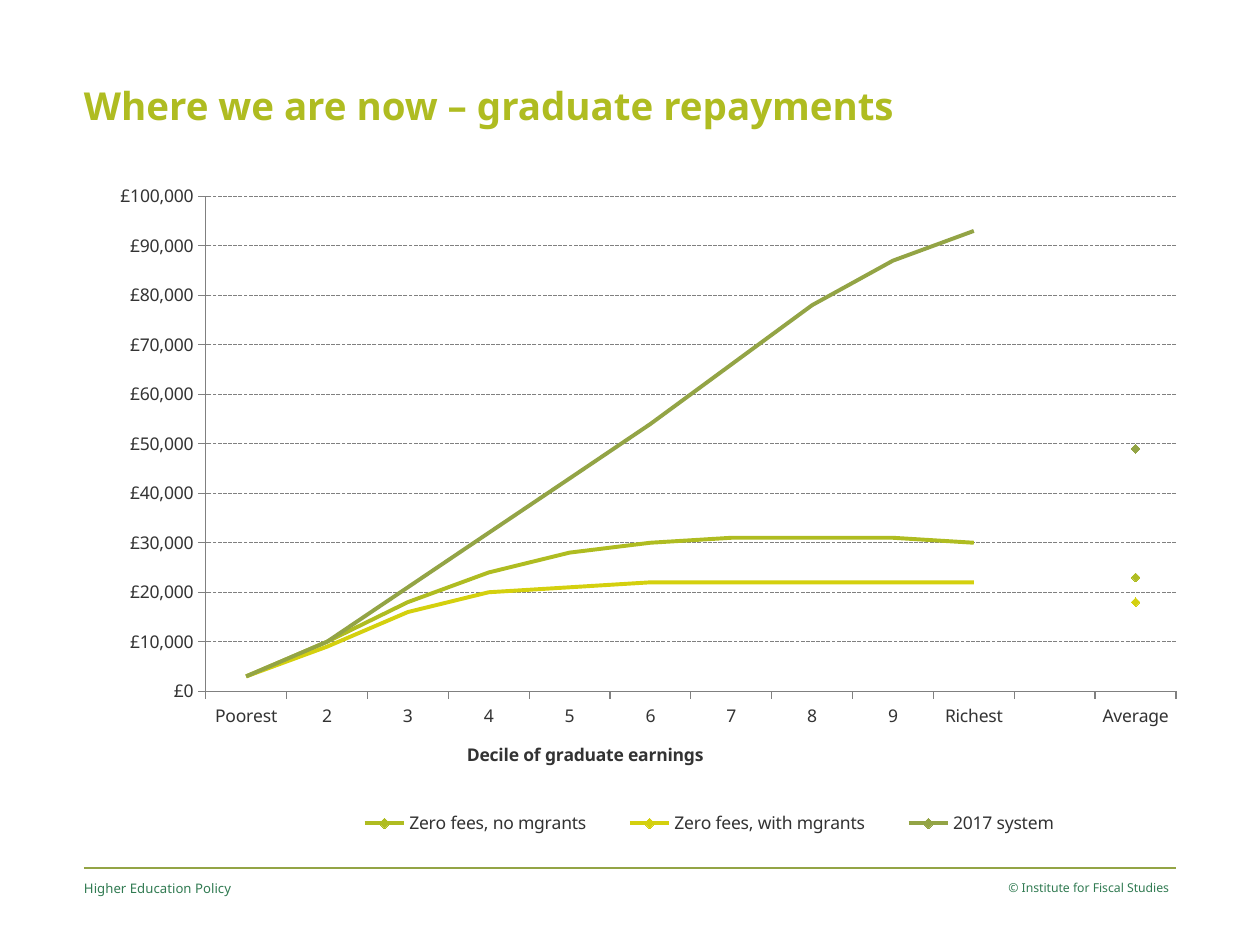
from lxml import etree
from pptx import Presentation
from pptx.chart.data import CategoryChartData
from pptx.dml.color import RGBColor
from pptx.enum.chart import (XL_CHART_TYPE as ChartType, XL_LEGEND_POSITION as LegendPos,
                             XL_MARKER_STYLE as Marker, XL_TICK_MARK as Tick)
from pptx.enum.dml import MSO_LINE_DASH_STYLE as Dash
from pptx.enum.text import PP_ALIGN as Align
from pptx.oxml import parse_xml
from pptx.oxml.ns import nsdecls, qn
from pptx.util import Pt

# Content
FONT = "Noto Sans"
COLORS = {"no grants": "AFBC21", "with grants": "D4D00E", "current": "93A445",
          "footer": "317B52", "text": "333333", "axis": "808080"}
TITLE = "Where we are now – graduate repayments"
TOPIC = "Higher Education Policy"
COPYRIGHT = "© Institute for Fiscal Studies"
AXIS_TITLE = "Decile of graduate earnings"
DECILES = ["Poorest", "2", "3", "4", "5", "6", "7", "8", "9", "Richest"]
# (legend name, colour, repayments by decile in £000, average in £000)
SYSTEMS = [
    ("Zero fees, no mgrants", "no grants", [3, 10, 18, 24, 28, 30, 31, 31, 31, 30], 23),
    ("Zero fees, with mgrants", "with grants", [3, 9, 16, 20, 21, 22, 22, 22, 22, 22], 18),
    ("2017 system", "current", [3, 10, 21, 32, 43, 54, 66, 78, 87, 93], 49),
]

# Page grid
LEFT, RIGHT, FOOTER_TOP = 48, 672, 503


def rgb(key):
    return RGBColor.from_string(COLORS[key])


def set_font(font, size, color, bold=False):
    font.name, font.size, font.bold = FONT, Pt(size), bold
    font.color.rgb = rgb(color)


def add_text(slide, text, box, size, color, bold=False, align=Align.LEFT, inset_right=0):
    frame = slide.shapes.add_textbox(*map(Pt, box)).text_frame
    frame.word_wrap = True
    frame.margin_left = frame.margin_top = frame.margin_bottom = 0
    frame.margin_right = Pt(inset_right)
    paragraph = frame.paragraphs[0]
    paragraph.text, paragraph.alignment = text, align
    set_font(paragraph.font, size, color, bold)


def manual_layout(target="", **fractions):
    inner = f'<c:layoutTarget val="{target}"/>' if target else ""
    inner += '<c:xMode val="edge"/><c:yMode val="edge"/>'
    inner += "".join(f'<c:{key} val="{value}"/>' for key, value in fractions.items())
    return parse_xml(f'<c:layout {nsdecls("c")}><c:manualLayout>{inner}</c:manualLayout></c:layout>')


def place(parent, layout, before):
    """Put a manual layout in front of the named child element."""
    for old in parent.findall(qn("c:layout")):
        parent.remove(old)
    parent.find(qn(before)).addprevious(layout)


def add_repayment_chart(slide):
    data = CategoryChartData()
    data.categories = DECILES + ["", "Average"]
    for number, (_, _, deciles, _) in enumerate(SYSTEMS, 1):
        data.add_series(f"Series {number}", [value * 1000 for value in deciles] + [None, None])
    for name, _, _, average in SYSTEMS:
        data.add_series(name, [None] * (len(DECILES) + 1) + [average * 1000])
    chart = slide.shapes.add_chart(ChartType.LINE_MARKERS, Pt(36.7), Pt(82.8),
                                   Pt(652.3), Pt(408.2), data).chart
    chart.has_title = False
    set_font(chart.font, 10, "text")
    plot_area = chart.plots[0]
    plot_area.vary_by_categories = False
    place(chart.element.chart.plotArea,
          manual_layout("inner", x=0.124, y=0.072, w=0.85, h=0.693), "c:lineChart")

    # Decile lines first, then the average markers
    for index, series in enumerate(plot_area.series):
        color = rgb(SYSTEMS[index % len(SYSTEMS)][1])
        series.smooth = False
        series.format.line.color.rgb = color
        series.format.line.width = Pt(2.25)
        if index < len(SYSTEMS):
            series.marker.style = Marker.NONE
            continue
        series.marker.style, series.marker.size = Marker.DIAMOND, 5
        series.marker.format.fill.solid()
        series.marker.format.fill.fore_color.rgb = color
        series.marker.format.line.color.rgb = color

    # Axes
    deciles, pounds = chart.category_axis, chart.value_axis
    for axis in (deciles, pounds):
        axis.major_tick_mark, axis.minor_tick_mark = Tick.OUTSIDE, Tick.NONE
        axis.format.line.color.rgb = rgb("axis")
        axis.format.line.width = Pt(0.75)
        set_font(axis.tick_labels.font, 10, "text")
    pounds.minimum_scale, pounds.maximum_scale, pounds.major_unit = 0, 100000, 10000
    pounds.tick_labels.number_format = '"£"#,##0'
    pounds.tick_labels.number_format_is_linked = False
    grid = pounds.major_gridlines.format.line
    grid.color.rgb, grid.width, grid.dash_style = rgb("axis"), Pt(0.75), Dash.SQUARE_DOT
    axis_title = deciles.axis_title
    heading = axis_title.text_frame.paragraphs[0]
    heading.text = AXIS_TITLE
    set_font(heading.font, 10, "text", bold=True)
    place(axis_title._element, manual_layout(x=0.35, y=0.83), "c:overlay")

    # Legend lists only the average series
    chart.has_legend = True
    legend = chart.legend
    legend.position, legend.include_in_layout = LegendPos.BOTTOM, False
    set_font(legend.font, 10, "text")
    place(legend._element, manual_layout(x=0.23, y=0.92, w=0.67, h=0.06), "c:overlay")
    for index in range(len(SYSTEMS)):
        entry = parse_xml(f'<c:legendEntry {nsdecls("c")}><c:idx val="{index}"/>'
                          '<c:delete val="1"/></c:legendEntry>')
        legend._element.find(qn("c:layout")).addprevious(entry)


def main():
    deck = Presentation()
    deck.slide_width, deck.slide_height = Pt(720), Pt(540)
    slide = deck.slides.add_slide(deck.slide_layouts[6])

    # Footer rule
    rule = slide.shapes.add_connector(1, Pt(LEFT), Pt(496), Pt(RIGHT), Pt(496))
    rule.line.color.rgb, rule.line.width = rgb("current"), Pt(0.75)
    etree.SubElement(rule._element.spPr, qn("a:effectLst"))

    # Title and footer
    add_text(slide, TITLE, (LEFT, 46.8, 516, 32), 22, "no grants", bold=True)
    add_text(slide, COPYRIGHT, (RIGHT - 125, FOOTER_TOP, 125, 29), 7, "footer",
             align=Align.RIGHT, inset_right=4)
    add_text(slide, TOPIC, (LEFT, FOOTER_TOP, 228, 29), 7.5, "footer")

    add_repayment_chart(slide)
    deck.save("out.pptx")


if __name__ == "__main__":
    main()
